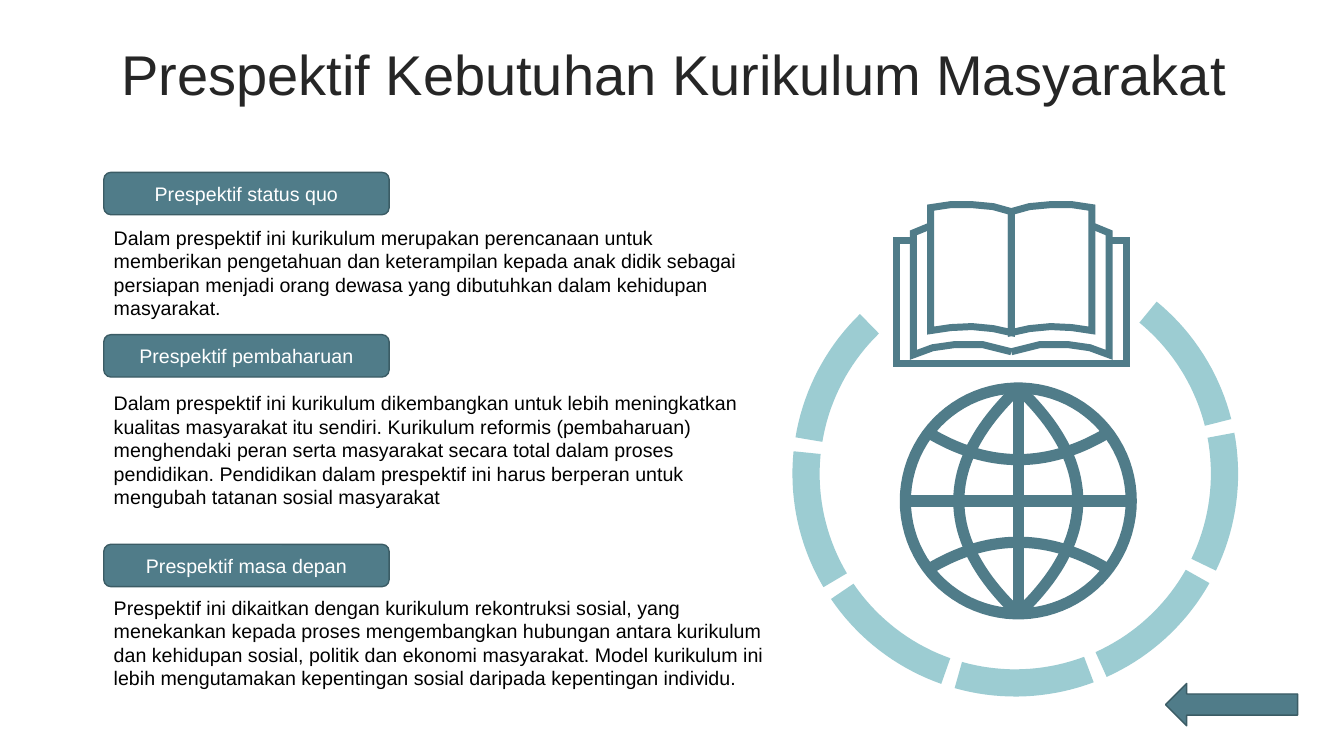
import math

from lxml import etree
from pptx import Presentation
from pptx import util as u
from pptx.dml.color import RGBColor
from pptx.enum import shapes, text
from pptx.oxml.ns import qn

PX = 9144  # 100 px to the inch
COLORS = {
    "title": "262626",
    "body": "000000",
    "label": "FFFFFF",
    "teal": "507C89",
    "edge": "3B5C65",
    "ring": "9CCCD2",
}

deck = Presentation()
deck.slide_width, deck.slide_height = 1333 * PX, 750 * PX
page = deck.slides.add_slide(deck.slide_layouts[5])


def write(box, wording, size, color, align):
    frame = box.text_frame
    frame.word_wrap = True
    frame.text = wording
    para = frame.paragraphs[0]
    para.alignment = align
    font = para.runs[0].font
    font.name, font.size = "Arial", u.Pt(size)
    font.color.rgb = RGBColor.from_string(COLORS[color])
    return para


def outline(strokes, fill=None, width=None):
    """Draw one freeform from point lists, either filled or stroked."""
    strokes = [[(x * PX, y * PX) for x, y in stroke] for stroke in strokes]
    builder = page.shapes.build_freeform(*strokes[0][0], scale=1.0)
    for i, stroke in enumerate(strokes):
        if i:
            builder.move_to(*stroke[0])
        builder.add_line_segments(stroke[1:], close=fill is not None)
    shape = builder.convert_to_shape()
    shape.shadow.inherit = False
    if fill:
        shape.fill.solid()
        shape.fill.fore_color.rgb = RGBColor.from_string(COLORS[fill])
        shape.line.fill.background()
    else:
        shape.fill.background()
        shape.line.color.rgb = RGBColor.from_string(COLORS["teal"])
        shape.line.width = u.Pt(width)
        line = shape.line._get_or_add_ln()
        etree.SubElement(line, qn("a:miter")).set("lim", "800000")


# Title
title = page.shapes.title
title.left, title.top, title.width, title.height = [v * PX for v in (35, 37, 1266, 79)]
heading = write(title, "Prespektif Kebutuhan Kurikulum Masyarakat", 40, "title",
                text.PP_ALIGN.CENTER)
heading.line_spacing = 0.9
title.text_frame.vertical_anchor = text.MSO_ANCHOR.MIDDLE

# Open book: the left half as offsets from the spine, then its mirror
SPINE = 1003
half_book = [
    [(0, 330), (0, 210), (18, 205), (39, 203), (60, 203), (80, 206),
     (80, 328), (60, 325), (39, 324), (18, 326), (0, 330)],
    [(80, 224), (97, 231), (97, 352), (78, 345), (57, 342), (28, 342), (0, 349)],
    [(97, 239), (114, 239), (114, 361), (0, 361)],
]
outline([[(SPINE + side * dx, y) for dx, y in stroke]
         for side in (-1, 1) for stroke in half_book], width=5)

# Globe: rim, axes, curved meridians and parallels
GLOBE_X, GLOBE_Y, GLOBE_R = 1010, 497, 112
steps = [i / 20 for i in range(-20, 21)]
globe = [
    [(GLOBE_X + GLOBE_R * math.cos(math.radians(a)),
      GLOBE_Y + GLOBE_R * math.sin(math.radians(a))) for a in range(0, 361, 4)],
    [(GLOBE_X - GLOBE_R, GLOBE_Y), (GLOBE_X + GLOBE_R, GLOBE_Y)],
    [(GLOBE_X, GLOBE_Y - GLOBE_R), (GLOBE_X, GLOBE_Y + GLOBE_R)],
]
for side in (-1, 1):
    globe.append([(GLOBE_X + side * 59 * (1 - t * t), GLOBE_Y + GLOBE_R * t)
                  for t in steps])
    globe.append([(GLOBE_X + 86 * t, GLOBE_Y + side * (41 + 25 * t * t))
                  for t in steps])
outline(globe, width=8)

# Ring of seven segments, 40 degrees apart
RING_X, RING_Y, OUTER, INNER = 1007, 470, 221, 194
for k in range(7):
    angles = [math.radians(40 * k - 50.6 + 36.4 * i / 18) for i in range(19)]
    edges = [(OUTER, a) for a in angles] + [(INNER, a) for a in reversed(angles)]
    outline([[(RING_X + r * math.cos(a), RING_Y + r * math.sin(a))
              for r, a in edges]], fill="ring")

# Perspectives: label top, label, text top, text height, text
perspectives = [
    (171, "Prespektif status quo", 219, 81,
     "Dalam prespektif ini kurikulum merupakan perencanaan untuk memberikan "
     "pengetahuan dan keterampilan kepada anak didik sebagai persiapan menjadi "
     "orang dewasa yang dibutuhkan dalam kehidupan masyarakat."),
    (332, "Prespektif pembaharuan", 383, 128,
     "Dalam prespektif ini kurikulum dikembangkan untuk lebih meningkatkan "
     "kualitas masyarakat itu sendiri. Kurikulum reformis (pembaharuan) "
     "menghendaki peran serta masyarakat secara total dalam proses pendidikan. "
     "Pendidikan dalam prespektif ini harus berperan untuk mengubah tatanan "
     "sosial masyarakat"),
    (540, "Prespektif masa depan", 586, 104,
     "Prespektif ini dikaitkan dengan kurikulum rekontruksi sosial, yang "
     "menekankan kepada proses mengembangkan hubungan antara kurikulum dan "
     "kehidupan sosial, politik dan ekonomi masyarakat. Model kurikulum ini "
     "lebih mengutamakan kepentingan sosial daripada kepentingan individu."),
]
buttons = []
for label_top, label, text_top, height, wording in perspectives:
    box = page.shapes.add_textbox(103 * PX, text_top * PX, 667 * PX, height * PX)
    write(box, wording, 14, "body", text.PP_ALIGN.LEFT)
    box.text_frame.auto_size = text.MSO_AUTO_SIZE.SHAPE_TO_FIT_TEXT
    button = page.shapes.add_shape(shapes.MSO_SHAPE.ROUNDED_RECTANGLE,
                                   103 * PX, label_top * PX, 283 * PX, 42 * PX)
    write(button, label, 14, "label", text.PP_ALIGN.CENTER)
    button.text_frame.vertical_anchor = text.MSO_ANCHOR.MIDDLE
    buttons.append(button)

# Back arrow, styled like the labels
buttons.append(page.shapes.add_shape(shapes.MSO_SHAPE.LEFT_ARROW,
                                     1156 * PX, 678 * PX, 131 * PX, 42 * PX))
for button in buttons:
    button.shadow.inherit = False
    button.fill.solid()
    button.fill.fore_color.rgb = RGBColor.from_string(COLORS["teal"])
    button.line.color.rgb = RGBColor.from_string(COLORS["edge"])
    button.line.width = u.Pt(1)

deck.save("out.pptx")
